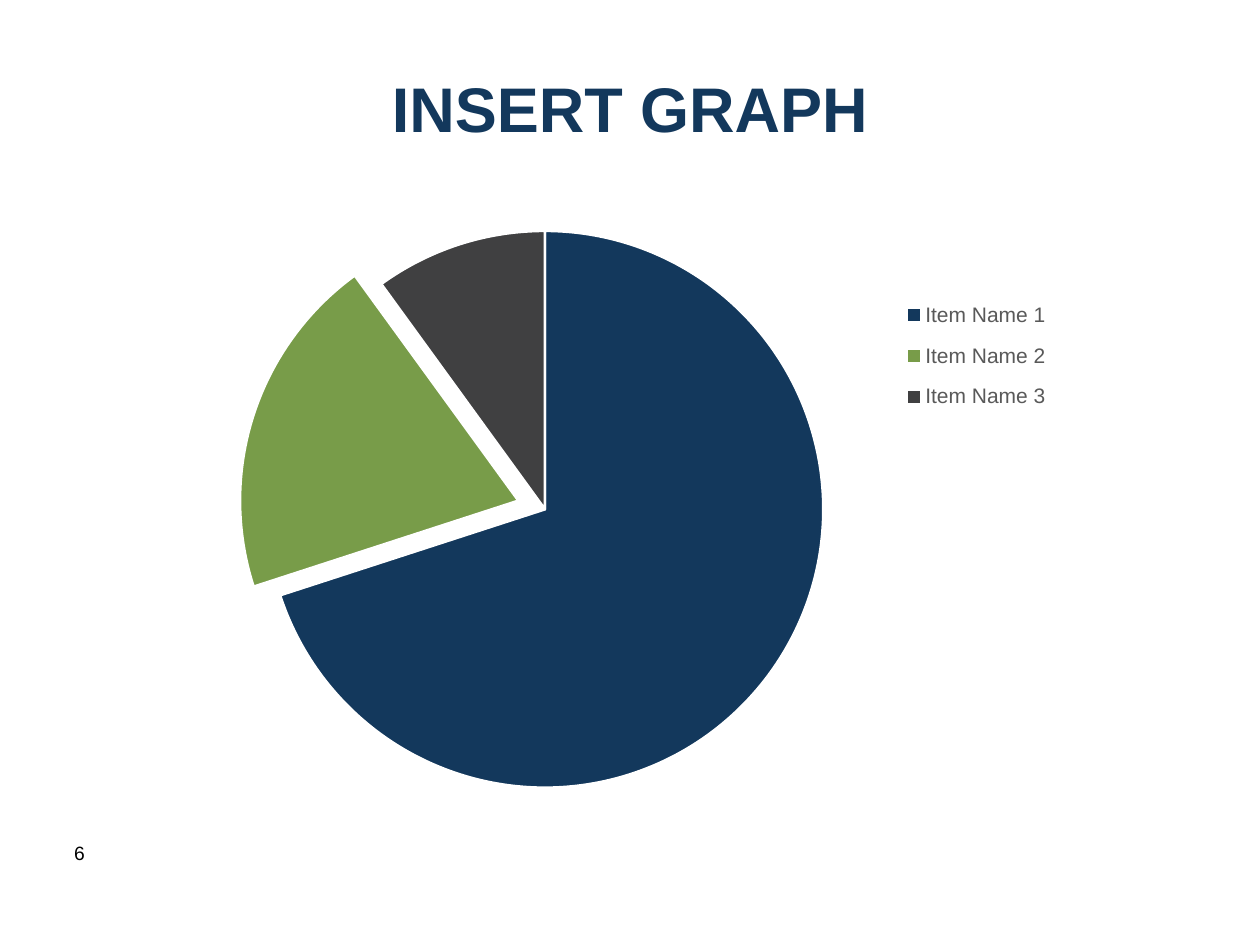
from dataclasses import dataclass

from lxml import etree
from pptx import Presentation
from pptx.chart import data as cd
from pptx.dml import color
from pptx.enum import chart as ec, text
from pptx.oxml import ns
from pptx.util import Inches, Pt


@dataclass(frozen=True)
class Theme:
    font: str = "Arial"
    navy: str = "13385C"
    green: str = "789C49"
    charcoal: str = "404041"
    grey: str = "595959"
    black: str = "000000"
    white: str = "FFFFFF"
    title: float = 36
    legend: float = 12
    number: float = 11
    border: float = 1.5


THEME = Theme()


def rgb(value):
    return color.RGBColor.from_string(value)


def inches(box):
    return [Inches(v) for v in box]


def set_font(font, size, fill, bold=False):
    values = {"name": THEME.font, "size": Pt(size), "bold": bold}
    for name, value in values.items():
        setattr(font, name, value)
    font.color.rgb = rgb(fill)


def set_layout(element, box, before, inner=False):
    for old in element.findall(ns.qn("c:layout")):
        element.remove(old)
    layout = etree.Element(ns.qn("c:layout"))
    manual = etree.SubElement(layout, ns.qn("c:manualLayout"))
    values = {"layoutTarget": "inner"} if inner else {}
    values.update(xMode="edge", yMode="edge", **dict(zip("xywh", box)))
    for tag, value in values.items():
        etree.SubElement(manual, ns.qn(f"c:{tag}")).set("val", str(value))
    element.find(ns.qn(before)).addprevious(layout)


def add_title(s, box, words):
    sp = s.shapes.title
    for name, value in zip(("left", "top", "width", "height"), inches(box)):
        setattr(sp, name, value)
    tf = sp.text_frame
    tf.vertical_anchor = text.MSO_ANCHOR.MIDDLE
    tf.word_wrap = True
    p = tf.paragraphs[0]
    p.alignment = text.PP_ALIGN.CENTER
    r = p.add_run()
    r.text = words
    set_font(r.font, THEME.title, THEME.navy, True)


def add_pie(s, box, items):
    data = cd.CategoryChartData()
    data.categories = list(items)
    data.add_series("Series 1", [value for value, _ in items.values()])
    chart = s.shapes.add_chart(ec.XL_CHART_TYPE.PIE, *inches(box), data).chart
    chart.has_title = False
    set_font(chart.font, 10, THEME.black)

    chart.has_legend = True
    legend = chart.legend
    legend.position = ec.XL_LEGEND_POSITION.BOTTOM
    legend.include_in_layout = False
    set_font(legend.font, THEME.legend, THEME.grey)

    plot = chart.plots[0]
    plot.vary_by_categories = True
    series = plot.series[0]
    for i, (_, fill) in enumerate(items.values()):
        point = series.points[i].format
        point.fill.solid()
        point.fill.fore_color.rgb = rgb(fill)
        point.line.color.rgb = rgb(THEME.white)
        point.line.width = Pt(THEME.border)

    pulled = series._element.findall(ns.qn("c:dPt"))[1]
    explosion = etree.Element(ns.qn("c:explosion"), val="10")
    pulled.find(ns.qn("c:spPr")).addprevious(explosion)

    area = chart._chartSpace.find(f".//{ns.qn('c:plotArea')}")
    set_layout(area, (0.25, 0.03, 0.49, 0.88), "c:pieChart", inner=True)
    set_layout(legend._element, (0.79, 0.12, 0.17, 0.22), "c:overlay")


def add_number(s, box, words):
    tf = s.shapes.add_textbox(*inches(box)).text_frame
    tf.word_wrap = True
    r = tf.paragraphs[0].add_run()
    r.text = words
    set_font(r.font, THEME.number, THEME.black)


def main():
    prs = Presentation()
    prs.slide_width, prs.slide_height = Inches(10), Inches(7.5)
    s = prs.slides.add_slide(prs.slide_layouts[5])
    add_number(s, (0.49, 6.63, 0.43, 0.54), "6")
    add_pie(s, (-0.14, 1.66, 9.02, 5.07), {
        "Item Name 1": (70, THEME.navy),
        "Item Name 2": (20, THEME.green),
        "Item Name 3": (10, THEME.charcoal),
    })
    add_title(s, (1.86, 0.52, 6.28, 0.67), "INSERT GRAPH")
    prs.save("out.pptx")


if __name__ == "__main__":
    main()
